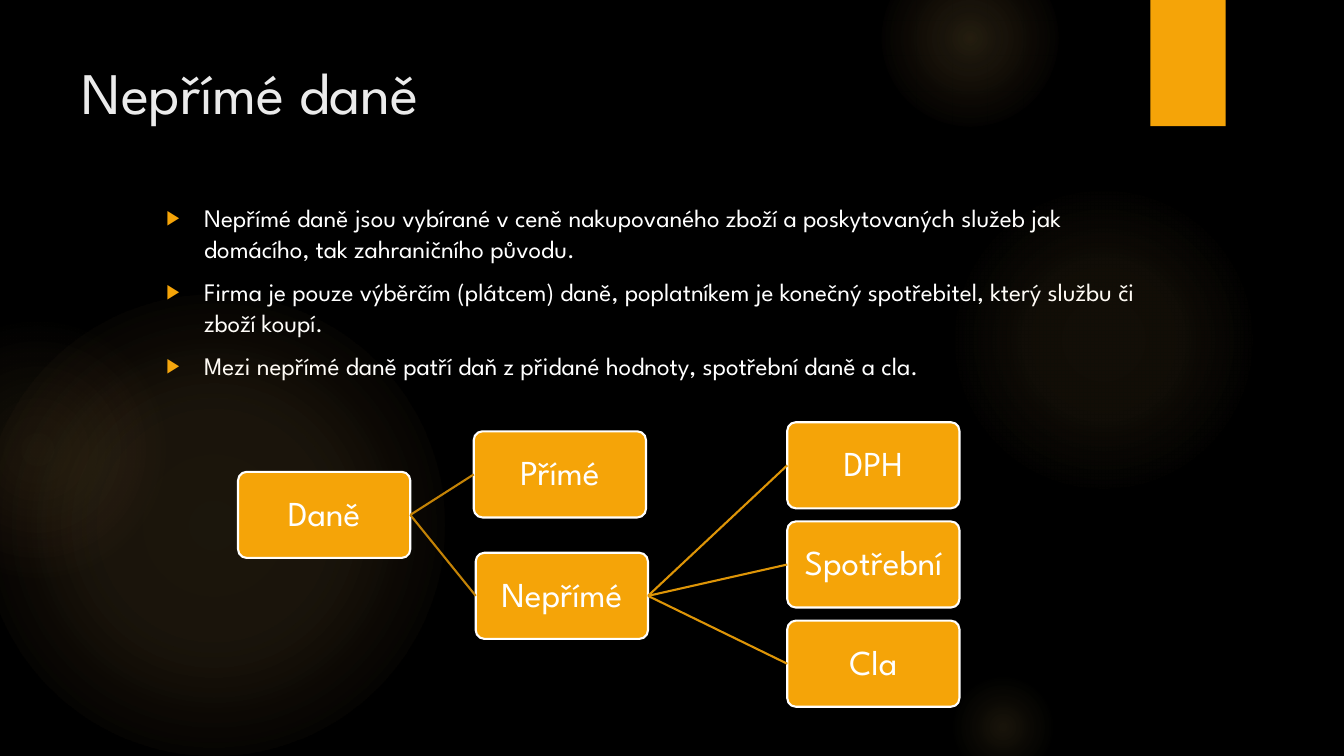
from dataclasses import dataclass

import pptx
import pptx.dml.color
import pptx.enum.shapes
import pptx.enum.text
import pptx.oxml
import pptx.oxml.ns
import pptx.util
from pptx.util import Cm, Pt

NS = pptx.oxml.ns.nsdecls("a")
SHAPE = pptx.enum.shapes.MSO_SHAPE
ALIGN = pptx.enum.text.PP_ALIGN
ANCHOR = pptx.enum.text.MSO_ANCHOR


@dataclass(frozen=True)
class Theme:
    font: str = "League Spartan"
    background: str = "000000"
    accent: str = "F5A408"
    glow: str = "FAC96A"
    warm_glow: str = "F59B74"
    title: str = "EBEBEB"
    text: str = "FFFFFF"
    branch: str = "C48306"
    leaf_branch: str = "DE9507"
    title_size: float = 42
    body_size: float = 18
    box_size: float = 25
    line_width: float = 1.5


@dataclass(frozen=True)
class Glow:
    left: float
    top: float
    size: float
    stops: tuple  # (position %, opacity %)
    edge: str


@dataclass(frozen=True)
class Box:
    text: str
    left: float
    top: float
    parent: str = ""
    branch: str = ""


THEME = Theme()
BOX_WIDTH, BOX_HEIGHT = 4.34, 2.17
LEAF_LEFT, LEAF_TOP, LEAF_STEP = 19.84, 10.64, 2.5

GLOWS = [
    Glow(-0.43, 7.42, 11.63, ((0, 11), (36, 10), (75, 0)), THEME.glow),
    Glow(-2.34, 8.05, 6.55, ((0, 8), (36, 5), (71, 0)), THEME.warm_glow),
    Glow(23.9, 4.65, 7.82, ((0, 7), (36, 6), (69, 0)), THEME.glow),
    Glow(22.22, -1.27, 4.45, ((0, 14), (36, 7), (73, 0)), THEME.glow),
    Glow(23.9, 16.94, 2.74, ((0, 10), (31, 5), (66, 0)), THEME.glow),
]
BULLETS = [
    "Nepřímé daně jsou vybírané v ceně nakupovaného zboží a poskytovaných služeb "
    "jak domácího, tak zahraničního původu.",
    "Firma je pouze výběrčím (plátcem) daně, poplatníkem je konečný spotřebitel, "
    "který službu či zboží koupí.",
    "Mezi nepřímé daně patří daň z přidané hodnoty, spotřební daně a cla.",
]
BOXES = [
    Box("Daně", 6.0, 11.89),
    Box("Přímé", 11.94, 10.87, "Daně", THEME.branch),
    Box("Nepřímé", 11.99, 13.93, "Daně", THEME.branch),
] + [
    Box(name, LEAF_LEFT, LEAF_TOP + i * LEAF_STEP, "Nepřímé", THEME.leaf_branch)
    for i, name in enumerate(("DPH", "Spotřební", "Cla"))
]


def rgb(color: str) -> pptx.dml.color.RGBColor:
    return pptx.dml.color.RGBColor.from_string(color)


def write(p, text: str, *, size: float, color: str = THEME.text,
          align=ALIGN.LEFT, after: float = 6) -> None:
    """Add a formatted run to paragraph p."""
    p.alignment = align
    p.space_after = Pt(after)
    r = p.add_run()
    r.text = text
    r.font.name, r.font.size = THEME.font, Pt(size)
    r.font.color.rgb = rgb(color)


def place(sp, left: float, top: float, width: float, height: float):
    """Move a placeholder and return its text frame, anchored at the top."""
    sp.left, sp.top, sp.width, sp.height = map(Cm, (left, top, width, height))
    tf = sp.text_frame
    tf.word_wrap = True
    tf.auto_size = pptx.enum.text.MSO_AUTO_SIZE.NONE
    tf.vertical_anchor = ANCHOR.TOP
    return tf


def add_bullet(p) -> None:
    pPr = p._p.get_or_add_pPr()
    pPr.set("marL", str(Cm(0.95)))
    pPr.set("indent", str(-Cm(0.95)))
    for xml in (
        f'<a:buClr {NS}><a:srgbClr val="{THEME.accent}"/></a:buClr>',
        f'<a:buSzPct {NS} val="80000"/>',
        f'<a:buFont {NS} typeface="Arial"/>',
        f'<a:buChar {NS} char="▶"/>',
    ):
        pPr.append(pptx.oxml.parse_xml(xml))


def add_shape(s, kind, left: float, top: float, width: float, height: float):
    sp = s.shapes.add_shape(kind, Cm(left), Cm(top), Cm(width), Cm(height))
    sp.shadow.inherit = False
    sp.fill.solid()
    sp.fill.fore_color.rgb = rgb(THEME.accent)
    sp.line.fill.background()
    return sp


def add_glow(s, glow: Glow) -> None:
    sp = add_shape(s, SHAPE.OVAL, glow.left, glow.top, glow.size, glow.size)
    colors = (THEME.glow, THEME.glow, glow.edge)
    stops = "".join(
        f'<a:gs pos="{pos * 1000}"><a:srgbClr val="{color}">'
        f'<a:alpha val="{alpha * 1000}"/></a:srgbClr></a:gs>'
        for (pos, alpha), color in zip(glow.stops, colors)
    )
    grad = pptx.oxml.parse_xml(
        f'<a:gradFill {NS}><a:gsLst>{stops}</a:gsLst><a:path path="circle">'
        '<a:fillToRect l="50000" t="50000" r="50000" b="50000"/></a:path></a:gradFill>'
    )
    spPr = sp._element.spPr
    spPr.replace(spPr.find(pptx.oxml.ns.qn("a:solidFill")), grad)


def add_box(s, box: Box):
    sp = add_shape(s, SHAPE.ROUNDED_RECTANGLE, box.left, box.top, BOX_WIDTH, BOX_HEIGHT)
    sp.adjustments[0] = 0.1
    sp.line.color.rgb = rgb(THEME.text)
    sp.line.width = Pt(THEME.line_width)
    tf = sp.text_frame
    tf.word_wrap = True
    tf.vertical_anchor = ANCHOR.MIDDLE
    tf.margin_left = tf.margin_right = tf.margin_top = tf.margin_bottom = Cm(0.1)
    p = tf.paragraphs[0]
    p.line_spacing = 0.9
    write(p, box.text, size=THEME.box_size, align=ALIGN.CENTER, after=0)
    return sp


def join(s, parent, child, color: str) -> None:
    """Link the right side of parent to the left side of child."""
    line = s.shapes.add_connector(pptx.enum.shapes.MSO_CONNECTOR.STRAIGHT, 0, 0, 0, 0)
    line.begin_connect(parent, 3)
    line.end_connect(child, 1)
    line.line.color.rgb = rgb(color)
    line.line.width = Pt(THEME.line_width)
    line._element.spPr.append(pptx.oxml.parse_xml(f"<a:effectLst {NS}/>"))


def main() -> None:
    prs = pptx.Presentation()
    prs.slide_width, prs.slide_height = Cm(33.87), Cm(19.05)
    s = prs.slides.add_slide(prs.slide_layouts[1])

    # Background
    s.background.fill.solid()
    s.background.fill.fore_color.rgb = rgb(THEME.background)
    for glow in GLOWS:
        add_glow(s, glow)
    add_shape(s, SHAPE.RECTANGLE, 28.99, 0, 1.9, 3.18)

    # Title and list
    tf = place(s.shapes.title, 1.8, 1.27, 26.14, 2.03)
    write(tf.paragraphs[0], "Nepřímé daně", size=THEME.title_size, color=THEME.title)
    tf = place(s.placeholders[1], 3.94, 4.98, 25.22, 11.46)
    for i, text in enumerate(BULLETS):
        p = tf.add_paragraph() if i else tf.paragraphs[0]
        write(p, text, size=THEME.body_size)
        add_bullet(p)

    # Tax tree
    nodes = {box.text: add_box(s, box) for box in BOXES}
    for box in BOXES:
        if box.parent:
            join(s, nodes[box.parent], nodes[box.text], box.branch)

    prs.save("out.pptx")


if __name__ == "__main__":
    main()
